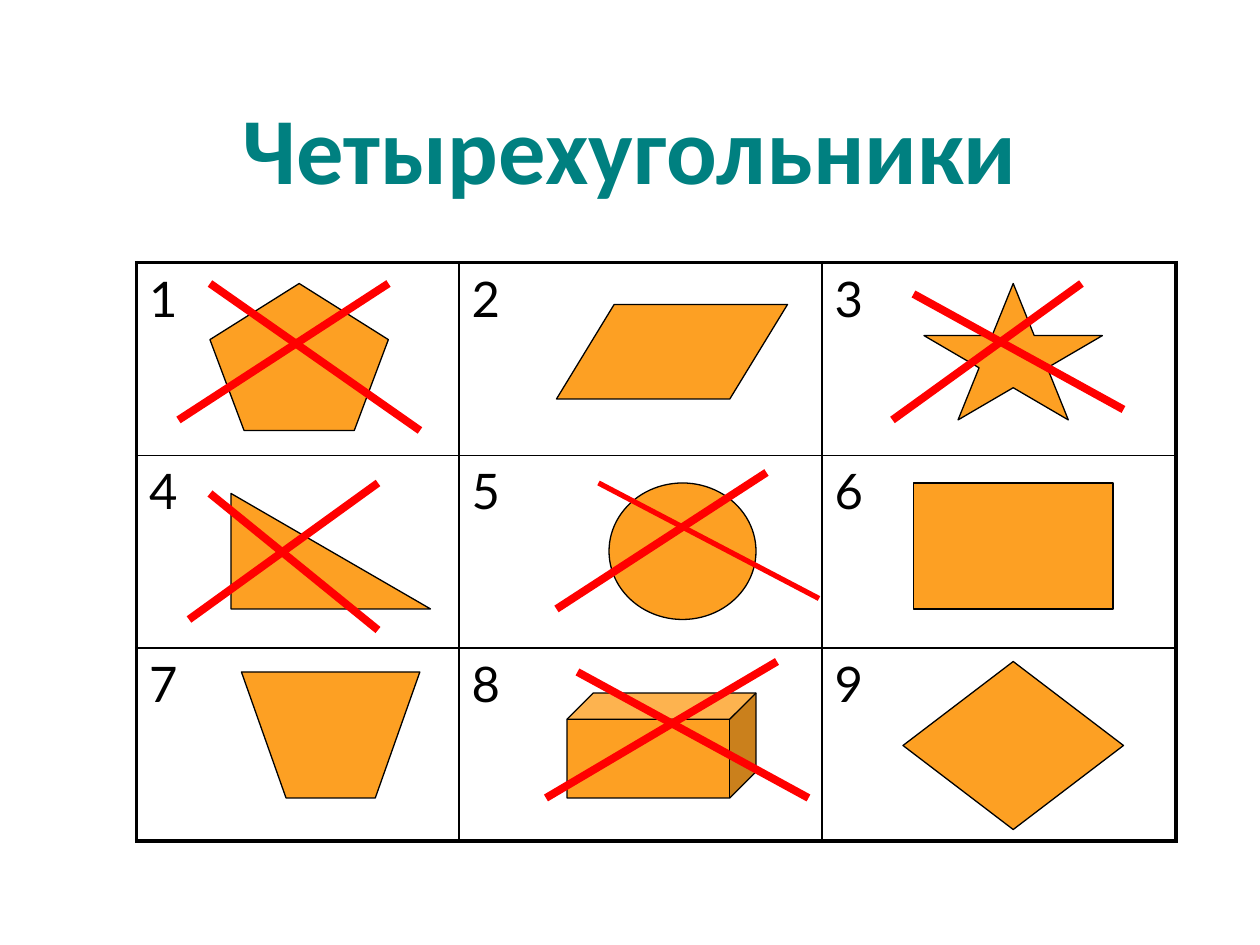
from lxml import etree
from pptx import Presentation, util as u
from pptx.dml.color import RGBColor
from pptx.enum import shapes, text
from pptx.oxml import ns

# Content: places are in units of 1/12 inch, the slide is 120 x 90
UNIT = u.Inches(1) // 12
HEX = {"title": "008080", "fill": "FDA023", "edge": "000000", "cross": "FF0000"}
TITLE = "Четырехугольники"
COLS, ROWS = (2.56, 2.88, 2.81), (1.53,) * 3
KIND = shapes.MSO_SHAPE

# kind, (left, top, width, height), adjustment
FIGURES = [
    (KIND.OVAL, (58, 46, 14, 13), None),
    (KIND.CUBE, (54, 66, 18, 10), 0.25),
    (KIND.PARALLELOGRAM, (53, 29, 22, 9), 0.61),
    (KIND.RIGHT_TRIANGLE, (22, 47, 19, 11), None),
    (KIND.STAR_5_POINT, (88, 27, 17, 13), None),
    (KIND.DIAMOND, (86, 63, 21, 16), None),
    (KIND.REGULAR_PENTAGON, (20, 27, 17, 14), None),
    (KIND.RECTANGLE, (87, 46, 19, 12), None),
]
TRAPEZOID = [(23, 64), (27.25, 76), (35.75, 76), (40, 64)]

# x1, y1, x2, y2, line width
STROKES = [
    (37, 27, 17, 40, 4.5), (20, 27, 40, 41, 4.5),
    (20, 47, 36, 60, 4.5), (36, 46, 18, 59, 4.5),
    (73, 45, 53, 58, 4.5), (57, 46, 78, 57, 3),
    (74, 63, 52, 76, 4.5), (55, 64, 77, 76, 4.5),
    (87, 28, 107, 39, 4.5), (103, 27, 85, 40, 4.5),
]


def color(name):
    return RGBColor.from_string(HEX[name])


def grid(*nums):
    return [round(n * UNIT) for n in nums]


def style(font, name, size, tint, bold=False):
    font.name, font.size, font.bold = name, u.Pt(size), bold
    font.color.rgb = color(tint)


def border(cell, side, width):
    props = cell._tc.get_or_add_tcPr()
    line = etree.SubElement(props, ns.qn("a:ln" + side), w=str(u.Pt(width)))
    fill = etree.SubElement(line, ns.qn("a:solidFill"))
    etree.SubElement(fill, ns.qn("a:srgbClr"), val=HEX["edge"])


def paint(shape):
    shape.shadow.inherit = False
    shape.fill.solid()
    shape.fill.fore_color.rgb = color("fill")
    shape.line.color.rgb = color("edge")
    shape.line.width = u.Pt(0.75)


def add_title(slide):
    frame = slide.shapes.add_textbox(*grid(6, 5, 108, 18)).text_frame
    frame.word_wrap = True
    frame.vertical_anchor = text.MSO_ANCHOR.MIDDLE
    par = frame.paragraphs[0]
    par.text = TITLE
    par.alignment = text.PP_ALIGN.CENTER
    style(par.font, "Calibri", 54, "title", True)


def add_cells(slide):
    size = u.Inches(sum(COLS)), u.Inches(sum(ROWS))
    table = slide.shapes.add_table(len(ROWS), len(COLS), *grid(13, 25), *size).table
    table.first_row = table.horz_banding = False
    for col, width in zip(table.columns, COLS):
        col.width = u.Inches(width)
    for row, height in zip(table.rows, ROWS):
        row.height = u.Inches(height)
    for i, cell in enumerate(table.iter_cells()):
        r, c = divmod(i, len(COLS))
        par = cell.text_frame.paragraphs[0]
        par.text = str(i + 1)
        style(par.font, "Lato", 28, "edge")
        gap = etree.Element(ns.qn("a:spcBef"))
        etree.SubElement(gap, ns.qn("a:spcPct"), val="20000")
        par._p.get_or_add_pPr().insert(0, gap)
        # Thick outer frame, thin inner lines; borders go before the fill
        outer = {"L": c == 0, "R": c == len(COLS) - 1,
                 "T": r == 0, "B": r == len(ROWS) - 1}
        for side, edge in outer.items():
            border(cell, side, 2.25 if edge else 1)
        cell.fill.background()


def add_figures(slide):
    for kind, place, adjust in FIGURES:
        shape = slide.shapes.add_shape(kind, *grid(*place))
        if adjust is not None:
            shape.adjustments[0] = adjust
        paint(shape)
    start, *rest = [grid(*point) for point in TRAPEZOID]
    pen = slide.shapes.build_freeform(*start)
    pen.add_line_segments(rest, close=True)
    paint(pen.convert_to_shape())


def add_crosses(slide):
    for *ends, width in STROKES:
        line = slide.shapes.add_connector(shapes.MSO_CONNECTOR.STRAIGHT, *grid(*ends))
        line.line.color.rgb = color("cross")
        line.line.width = u.Pt(width)
        etree.SubElement(line._element.spPr, ns.qn("a:effectLst"))


def main():
    deck = Presentation()
    deck.slide_width, deck.slide_height = grid(120, 90)
    slide = deck.slides.add_slide(deck.slide_layouts[6])
    for part in (add_title, add_cells, add_figures, add_crosses):
        part(slide)
    deck.save("out.pptx")


if __name__ == "__main__":
    main()
